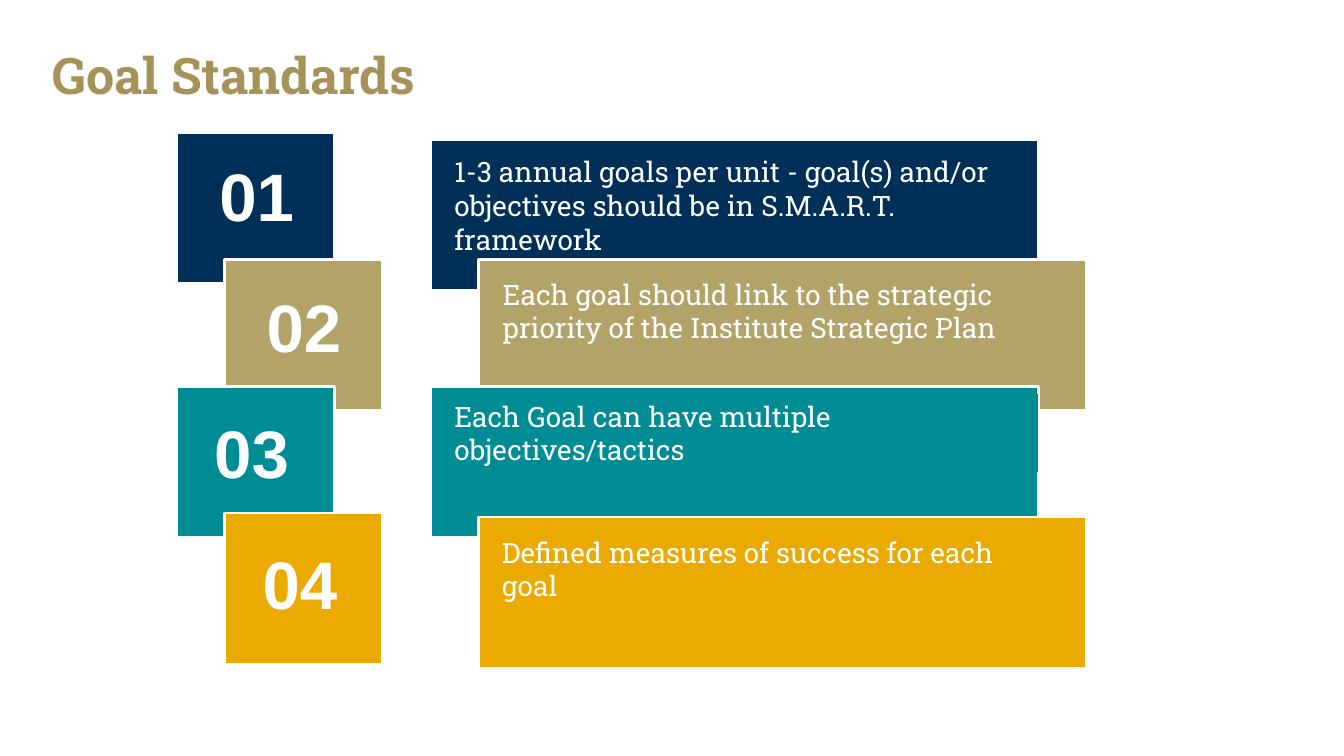
from dataclasses import dataclass

from pptx import Presentation
from pptx.dml.color import RGBColor
from pptx.enum.shapes import MSO_SHAPE
from pptx.enum.text import MSO_ANCHOR, PP_ALIGN
from pptx.slide import Slide
from pptx.text.text import _Paragraph
from pptx.util import Cm, Pt

HUES = {
    "navy": "003057",
    "gold": "B3A369",
    "teal": "008C95",
    "amber": "EAAA00",
    "title": "A7925A",
    "white": "FFFFFF",
}
HIGH = 3.81
SHIFT = 1.21
STEP = 3.2


@dataclass
class Box:
    left: float
    top: float
    width: float
    height: float


@dataclass
class Goal:
    text: str
    hue: str
    num: Box
    drop: float
    note: Box


GOALS = [
    Goal("1-3 annual goals per unit - goal(s) and/or objectives should be in S.M.A.R.T. framework",
         "navy", Box(5.16, 4.17, 2.62, 1.9), 0.18, Box(11.2, 3.78, 14.53, 2.82)),
    Goal("Each goal should link to the strategic priority of the Institute Strategic Plan",
         "gold", Box(6.35, 7.47, 2.62, 1.9), 0, Box(12.42, 6.86, 14.27, 1.96)),
    Goal("Each Goal can have multiple objectives/tactics",
         "teal", Box(5.03, 10.64, 2.62, 1.9), 0, Box(11.2, 9.93, 14.96, 1.96)),
    Goal("Defined measures of success for each goal",
         "amber", Box(6.25, 13.94, 2.62, 1.9), 0.1, Box(12.4, 13.36, 13.44, 1.96)),
]


def tint(name: str) -> RGBColor:
    return RGBColor.from_string(HUES[name])


def style(para: _Paragraph, face: str, size: int, hue: str, bold: bool) -> None:
    para.font.name = face
    para.font.size = Pt(size)
    para.font.bold = bold
    para.font.color.rgb = tint(hue)


def block(shapes, box: Box, hue: str, edge: bool):
    rect = shapes.add_shape(MSO_SHAPE.RECTANGLE, Cm(box.left), Cm(box.top),
                            Cm(box.width), Cm(box.height))
    rect.shadow.inherit = False
    rect.fill.solid()
    rect.fill.fore_color.rgb = tint(hue)
    if edge:
        rect.line.color.rgb = tint("white")
        rect.line.width = Pt(2)
    else:
        rect.line.fill.background()
    return rect


def card(slide: Slide, back: Box, front: Box, hue: str, text: str) -> _Paragraph:
    group = slide.shapes.add_group_shape()
    block(group.shapes, back, hue, True)
    frame = block(group.shapes, front, hue, False).text_frame
    frame.word_wrap = True
    frame.vertical_anchor = MSO_ANCHOR.TOP
    para = frame.paragraphs[0]
    para.text = text
    return para


def title(slide: Slide, text: str) -> None:
    frame = slide.shapes.add_textbox(Cm(1.07), Cm(0.56), Cm(31.75), Cm(2.82)).text_frame
    frame.word_wrap = True
    frame.vertical_anchor = MSO_ANCHOR.MIDDLE
    para = frame.paragraphs[0]
    para.text = text
    para.line_spacing = 0.9
    style(para, "Roboto Slab", 36, "title", True)


def main() -> None:
    deck = Presentation()
    deck.slide_width, deck.slide_height = Cm(33.87), Cm(19.05)
    slide = deck.slides.add_slide(deck.slide_layouts[6])
    title(slide, "Goal Standards")

    for row, goal in enumerate(GOALS):
        shift = row % 2 * SHIFT
        top = 3.33 + row * STEP

        tile = Box(4.45 + shift, top, 3.99, HIGH)
        para = card(slide, tile, goal.num, goal.hue, f"{row + 1:02}")
        para.alignment = PP_ALIGN.CENTER
        para.line_spacing = 0.8
        style(para, "Arial", 48, "white", True)

        panel = Box(10.85 + shift, top + goal.drop, 15.32, HIGH)
        para = card(slide, panel, goal.note, goal.hue, goal.text)
        para.alignment = PP_ALIGN.LEFT
        style(para, "Roboto Slab", 20, "white", False)

    deck.save("out.pptx")


if __name__ == "__main__":
    main()
